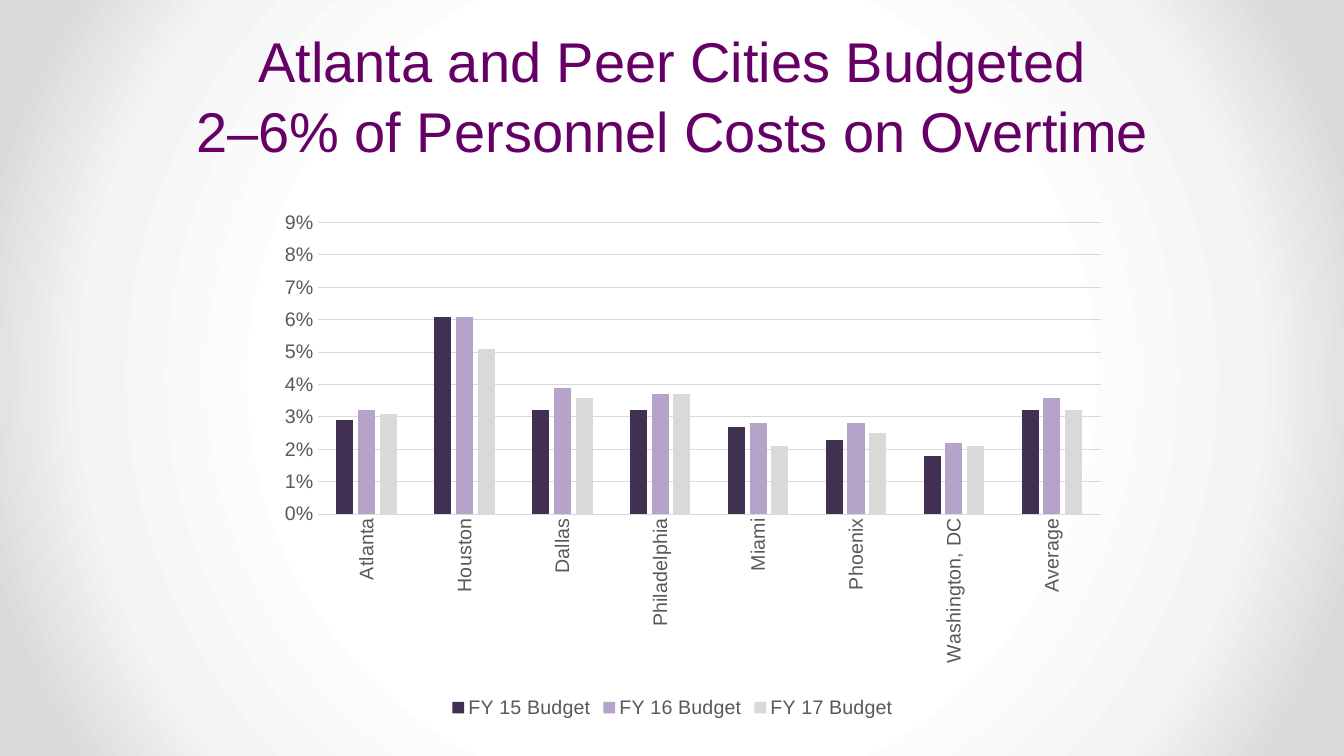
from lxml.etree import SubElement
from pptx import Presentation
from pptx.chart.data import CategoryChartData
from pptx.dml.color import RGBColor
from pptx.enum.chart import XL_CHART_TYPE, XL_LEGEND_POSITION, XL_TICK_MARK
from pptx.enum.text import MSO_ANCHOR, PP_ALIGN
from pptx.oxml import parse_xml
from pptx.oxml.ns import nsdecls, qn
from pptx.util import Inches, Pt

WIDTH, HEIGHT = Inches(13.33), Inches(7.5)
FONT = "Arial"
COLORS = {
    "title": "660066",
    "label": "595959",
    "rule": "D9D9D9",
    "FY 15 Budget": "403052",
    "FY 16 Budget": "B5A3C9",
    "FY 17 Budget": "D9D9D9",
}
BACKGROUND_STOPS = {50: "FFFFFF", 76: "F4F4F4", 92: "DADADA"}
CITIES = ["Atlanta", "Houston", "Dallas", "Philadelphia", "Miami",
          "Phoenix", "Washington, DC", "Average"]
OVERTIME_SHARES = {
    "FY 15 Budget": [0.029, 0.061, 0.032, 0.032, 0.027, 0.023, 0.018, 0.032],
    "FY 16 Budget": [0.032, 0.061, 0.039, 0.037, 0.028, 0.028, 0.022, 0.036],
    "FY 17 Budget": [0.031, 0.051, 0.036, 0.037, 0.021, 0.025, 0.021, 0.032],
}
PLOT_AREA = {"x": 0.109, "y": 0.055, "w": 0.863, "h": 0.551}


def color(name):
    return RGBColor.from_string(COLORS[name])


def format_font(font, size, color_name):
    font.name = FONT
    font.size = Pt(size)
    font.color.rgb = color(color_name)


def set_radial_background(page):
    stops = "".join(
        f'<a:gs pos="{percent * 1000}"><a:srgbClr val="{shade}"/></a:gs>'
        for percent, shade in BACKGROUND_STOPS.items())
    gradient = parse_xml(
        f'<a:gradFill {nsdecls("a")} rotWithShape="1"><a:gsLst>{stops}</a:gsLst>'
        '<a:path path="circle"><a:fillToRect l="50000" t="50000" r="50000" b="50000"/>'
        '</a:path></a:gradFill>')
    page.background.fill.solid()
    solid = page.element.find(".//" + qn("p:bgPr")).find(qn("a:solidFill"))
    solid.getparent().replace(solid, gradient)


def add_text(page, text, left, top, width, height, *, size, color_name,
             align=PP_ALIGN.CENTER, anchor=MSO_ANCHOR.BOTTOM, spacing=1.0):
    """Add one paragraph, with a line break at each newline."""
    box = page.shapes.add_textbox(left, top, width, height)
    frame = box.text_frame
    frame.word_wrap = True
    frame.vertical_anchor = anchor
    para = frame.paragraphs[0]
    para.alignment = align
    para.line_spacing = spacing
    for index, line in enumerate(text.split("\n")):
        if index:
            para.add_line_break()
        span = para.add_run()
        span.text = line
        format_font(span.font, size, color_name)


def format_rule(line):
    line.color.rgb = color("rule")
    line.width = Pt(0.75)


def format_axes(chart):
    cities, shares = chart.category_axis, chart.value_axis
    for axis in (cities, shares):
        axis.major_tick_mark = axis.minor_tick_mark = XL_TICK_MARK.NONE
        format_font(axis.tick_labels.font, 14, "label")
    format_rule(cities.format.line)
    label_body = cities.tick_labels.font and chart.element.find(
        ".//" + qn("c:catAx")).find(qn("c:txPr")).find(qn("a:bodyPr"))
    label_body.set("rot", "-5400000")
    label_body.set("vert", "horz")

    shares.minimum_scale, shares.maximum_scale, shares.major_unit = 0, 0.09, 0.01
    shares.format.line.fill.background()
    format_rule(shares.major_gridlines.format.line)
    shares.tick_labels.number_format = "0%"
    shares.tick_labels.number_format_is_linked = False


def place_plot(chart):
    """Fix the inner plot area as shares of the chart's size."""
    plot_area = chart.element.find(".//" + qn("c:plotArea"))
    layout = plot_area.find(qn("c:layout"))
    if layout is None:
        layout = SubElement(plot_area, qn("c:layout"))
        plot_area.insert(0, layout)
    manual = SubElement(layout, qn("c:manualLayout"))
    settings = {"layoutTarget": "inner", "xMode": "edge", "yMode": "edge", **PLOT_AREA}
    for tag, value in settings.items():
        SubElement(manual, qn("c:" + tag)).set("val", str(value))


def add_column_chart(page, left, top, width, height):
    data = CategoryChartData(number_format="0.0%")
    data.categories = CITIES
    for year, values in OVERTIME_SHARES.items():
        data.add_series(year, values)
    chart = page.shapes.add_chart(
        XL_CHART_TYPE.COLUMN_CLUSTERED, left, top, width, height, data).chart
    chart.has_title = False
    format_font(chart.font, 14, "label")

    columns = chart.plots[0]
    columns.vary_by_categories = False
    columns.gap_width, columns.overlap = 219, -27
    for series in columns.series:
        series.format.fill.solid()
        series.format.fill.fore_color.rgb = color(series.name)

    chart.has_legend = True
    chart.legend.position = XL_LEGEND_POSITION.BOTTOM
    chart.legend.include_in_layout = False
    format_font(chart.legend.font, 14, "label")
    format_axes(chart)
    place_plot(chart)


def main():
    deck = Presentation()
    deck.slide_width, deck.slide_height = WIDTH, HEIGHT
    page = deck.slides.add_slide(deck.slide_layouts[6])
    set_radial_background(page)
    add_text(page, "Atlanta and Peer Cities Budgeted\n2–6% of Personnel Costs on Overtime",
             0, 0, WIDTH, Inches(1.67), size=40, color_name="title", spacing=1.04)
    add_column_chart(page, Inches(2.17), Inches(1.92), Inches(9), HEIGHT * 7 // 10)
    deck.save("out.pptx")


if __name__ == "__main__":
    main()
